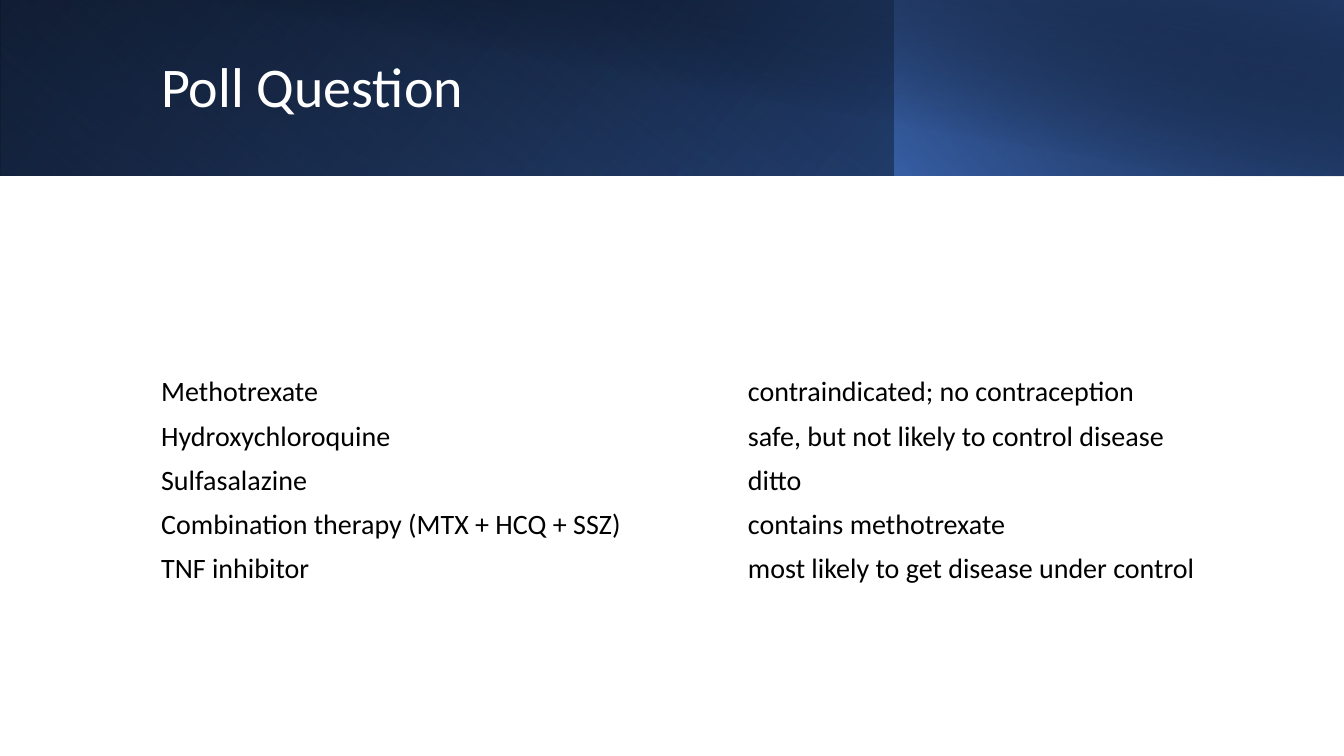
from lxml import etree
from pptx import Presentation
from pptx.dml.color import RGBColor
from pptx.enum.shapes import MSO_SHAPE
from pptx.enum.text import MSO_ANCHOR
from pptx.oxml.ns import qn
from pptx.util import Inches, Pt

RECT = MSO_SHAPE.RECTANGLE
MIDDLE = MSO_ANCHOR.MIDDLE

prs = Presentation()
prs.slide_width, prs.slide_height = Inches(13.33), Inches(7.5)
s = prs.slides.add_slide(prs.slide_layouts[6])


def set_gradient(sp, stops, angle):
    """Fill with (position, colour, opacity) stops, all in percent."""
    sp.fill.gradient()
    grad = sp._element.spPr.find(qn("a:gradFill"))
    gs_list = grad.find(qn("a:gsLst"))
    for gs in list(gs_list):
        gs_list.remove(gs)
    for pos, color, opacity in stops:
        gs = etree.SubElement(gs_list, qn("a:gs"), pos=str(pos * 1000))
        clr = etree.SubElement(gs, qn("a:srgbClr"), val=color)
        if opacity < 100:
            etree.SubElement(clr, qn("a:alpha"), val=str(opacity * 1000))
    lin = grad.find(qn("a:lin"))
    lin.set("ang", str(angle * 60000))
    lin.set("scaled", "0")


def add_text(box, lines, size, color):
    """Add a vertically centred text box with one paragraph per line."""
    tf = s.shapes.add_textbox(*map(Inches, box)).text_frame
    tf.word_wrap = True
    tf.vertical_anchor = MIDDLE
    tf.text = "\n".join(lines)
    for p in tf.paragraphs:
        p.line_spacing = 0.9
        for r in p.runs:
            r.font.name = "Calibri"
            r.font.size = Pt(size)
            r.font.color.rgb = RGBColor.from_string(color)
    return tf


# Header band: layered gradients (left, width, height, rotation, flip, stops, angle)
bands = [
    (0, 13.33, 1.74, 0, True, [(0, "000000", 100), (100, "2F5597", 100)], 140),
    (0, 8.88, 1.74, 180, True, [(20, "4472C4", 0), (100, "203864", 55)], 230),
    (8.87, 4.46, 1.74, 0, True, [(0, "4472C4", 66), (100, "000000", 30)], 220),
    (0.5, 12.83, 1.75, 0, False, [(50, "000000", 0), (99, "203864", 52)], 280),
]
for left, width, height, rotation, flip, stops, angle in bands:
    sp = s.shapes.add_shape(RECT, Inches(left), 0, Inches(width), Inches(height))
    sp.shadow.inherit = False
    sp.line.fill.background()
    sp.rotation = rotation
    if flip:
        sp._element.spPr.find(qn("a:xfrm")).set("flipH", "1")
    set_gradient(sp, stops, angle)

# Title
add_text((1.5, 0.32, 10.82, 1.13), ["Poll Question"], 40, "FFFFFF")

# Answers and comments, aligned on a tab stop
answers = [
    ("Methotrexate", "contraindicated; no contraception"),
    ("Hydroxychloroquine", "safe, but not likely to control disease"),
    ("Sulfasalazine", "ditto"),
    ("Combination therapy (MTX + HCQ + SSZ)", "contains methotrexate"),
    ("TNF inhibitor", "most likely to get disease under control"),
]
tf = add_text((1.5, 2.98, 10.63, 3.59), ["\t".join(a) for a in answers], 20, "000000")
for p in tf.paragraphs:
    p.space_before = Pt(10)
    tabs = etree.SubElement(p._p.get_or_add_pPr(), qn("a:tabLst"))
    etree.SubElement(tabs, qn("a:tab"), pos=str(Inches(5.82)), algn="l")

prs.save("out.pptx")
